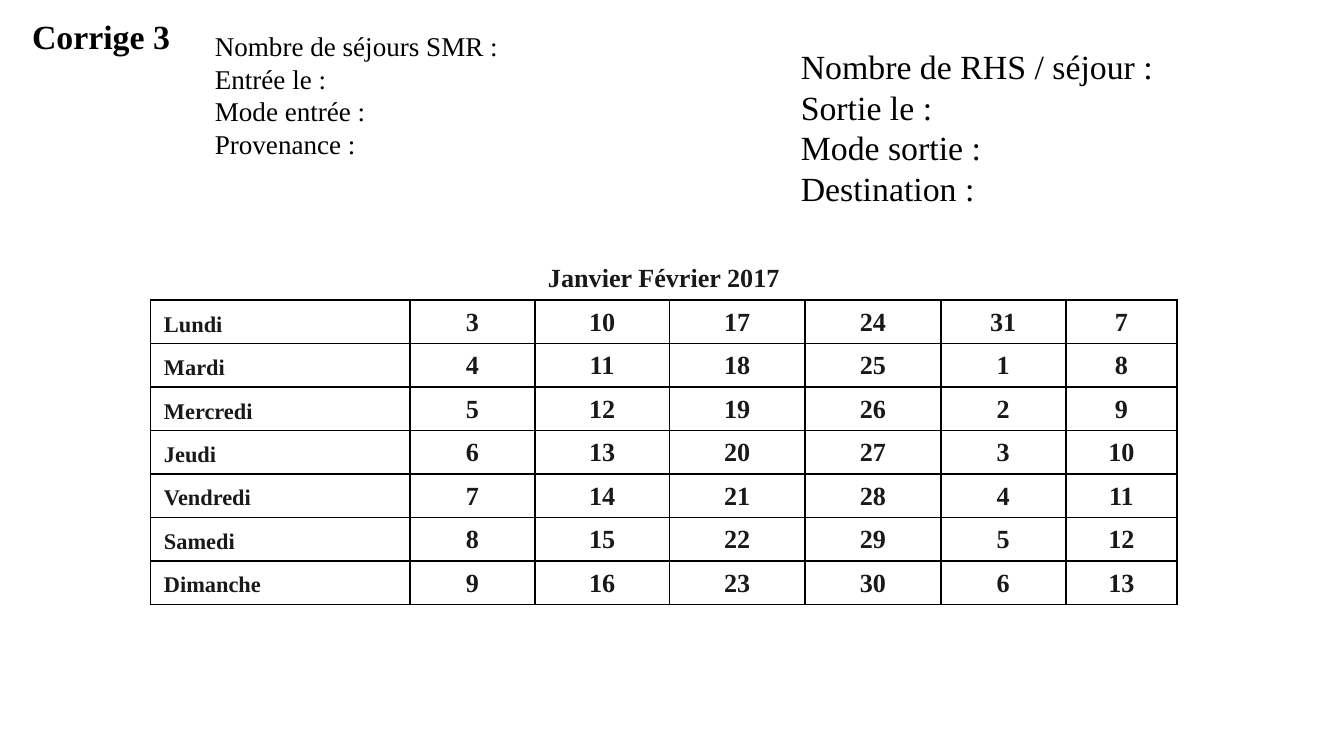
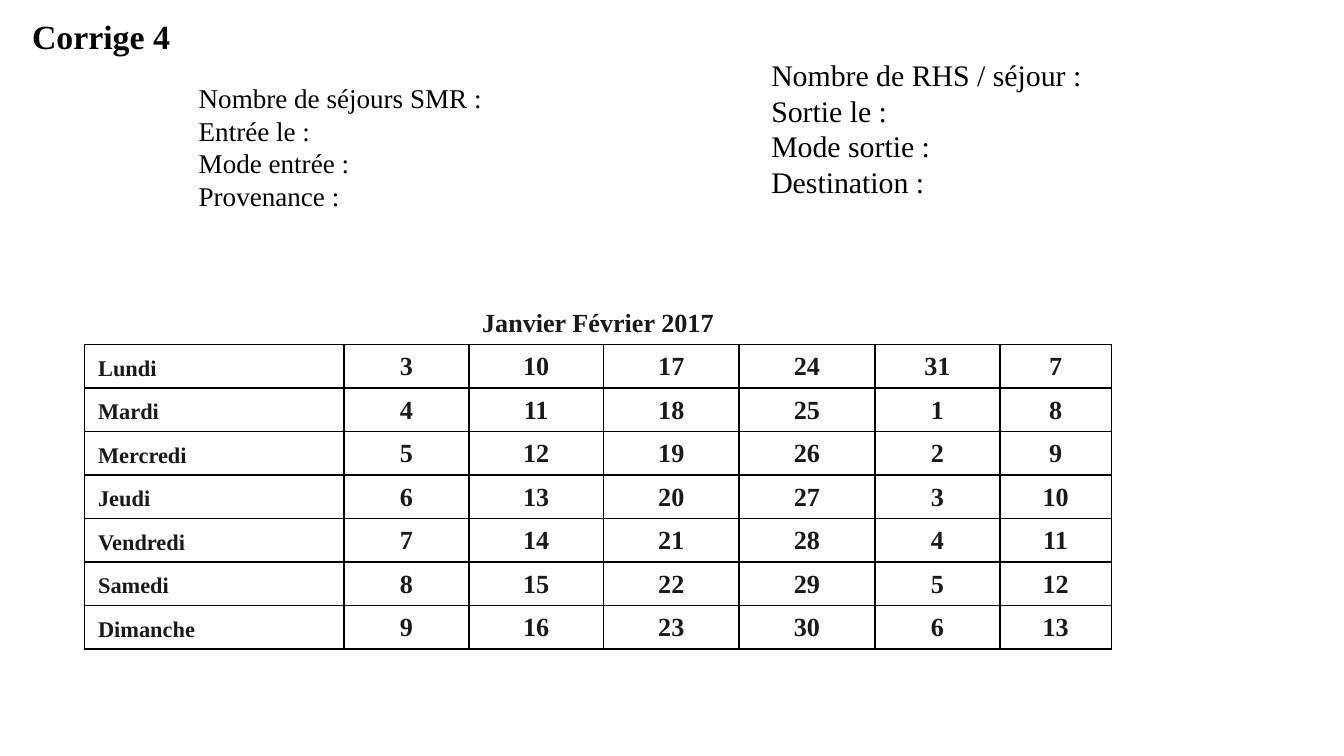
from lxml.etree import SubElement
from pptx import Presentation
from pptx.dml.color import RGBColor
from pptx.enum.text import MSO_ANCHOR, MSO_AUTO_SIZE, PP_ALIGN
from pptx.oxml.ns import qn
from pptx.util import Inches, Pt

FONT = "Times New Roman"
BLACK = RGBColor(0x00, 0x00, 0x00)
INK = RGBColor(0x19, 0x19, 0x19)

ENTRY_FIELDS = ["Nombre de séjours SMR\u00a0:", "Entrée le :", "Mode entrée :", "Provenance :"]
EXIT_FIELDS = ["Nombre de RHS / séjour\u00a0:", "Sortie le :", "Mode sortie :", "Destination :"]
WEEKDAYS = ["Lundi", "Mardi", "Mercredi", "Jeudi", "Vendredi", "Samedi", "Dimanche"]
CALENDAR_TITLE = "Janvier Février 2017"
COLUMN_WIDTHS = [1.93, 0.93, 1, 1.01, 1.01, 0.93, 0.83]
CALENDAR_HEIGHT = 2.59
FIRST_DAY = 3
DAYS_IN_JANUARY = 31
HANGING_INDENT = Inches(0.38)
SIDES = ("L", "R", "T", "B")


def add_span(para, text, size, color, bold=False):
    span = para.add_run()
    span.text = text
    span.font.name = FONT
    span.font.size = Pt(size)
    span.font.bold = bold
    span.font.color.rgb = color


def add_text(page, lines, left, top, width, height, size, bold=False):
    box = page.shapes.add_textbox(Inches(left), Inches(top), Inches(width), Inches(height))
    frame = box.text_frame
    frame.word_wrap = False
    frame.auto_size = MSO_AUTO_SIZE.SHAPE_TO_FIT_TEXT
    for index, line in enumerate(lines):
        para = frame.add_paragraph() if index else frame.paragraphs[0]
        add_span(para, line, size, BLACK, bold)


def set_borders(cell, visible_sides):
    properties = cell._tc.get_or_add_tcPr()
    for side in SIDES:
        line = SubElement(properties, qn(f"a:ln{side}"), w=str(Pt(1)))
        if side in visible_sides:
            fill = SubElement(line, qn("a:solidFill"))
            SubElement(fill, qn("a:srgbClr"), val=str(BLACK))
        else:
            SubElement(line, qn("a:noFill"))


def fill_cell(cell, text, size, align, visible_sides=SIDES):
    set_borders(cell, visible_sides)
    cell.fill.background()
    cell.vertical_anchor = MSO_ANCHOR.BOTTOM
    cell.margin_top = Inches(0.04)
    cell.margin_bottom = Inches(0.05)
    para = cell.text_frame.paragraphs[0]
    para.alignment = align
    properties = para._p.get_or_add_pPr()
    properties.set("marL", str(HANGING_INDENT))
    properties.set("indent", str(-HANGING_INDENT))
    if text:
        add_span(para, text, size, INK, True)


def day_number(row, week):
    return (FIRST_DAY - 1 + row + 7 * week) % DAYS_IN_JANUARY + 1


def add_calendar(page, left, top):
    row_count = len(WEEKDAYS) + 1
    column_count = len(COLUMN_WIDTHS)
    frame = page.shapes.add_table(row_count, column_count, Inches(left), Inches(top),
                                  Inches(sum(COLUMN_WIDTHS)), Inches(CALENDAR_HEIGHT))
    table = frame.table
    table.first_row = False
    table.horz_banding = False
    for column, width in zip(table.columns, COLUMN_WIDTHS):
        column.width = Inches(width)

    for index in range(column_count):
        title = "" if index else CALENDAR_TITLE
        fill_cell(table.cell(0, index), title, 14, PP_ALIGN.CENTER, ("B",))
    table.cell(0, 0).merge(table.cell(0, column_count - 1))

    for row, weekday in enumerate(WEEKDAYS):
        fill_cell(table.cell(row + 1, 0), weekday, 12, PP_ALIGN.LEFT)
        for week in range(column_count - 1):
            day = str(day_number(row, week))
            fill_cell(table.cell(row + 1, week + 1), day, 14, PP_ALIGN.CENTER)


def add_exercise(deck, number, entry_at, exit_box, exit_size, calendar_at):
    page = deck.slides.add_slide(deck.slide_layouts[6])
    add_text(page, [f"Corrige {number}"], 0.14, 0.07, 1.24, 0.41, 18.1, True)
    add_calendar(page, *calendar_at)
    add_text(page, ENTRY_FIELDS, *entry_at, 2.38, 1.08, 14.5)
    add_text(page, EXIT_FIELDS, *exit_box, exit_size)


def main():
    deck = Presentation()
    deck.slide_width = Inches(10)
    deck.slide_height = deck.slide_width * 9 // 16
    add_exercise(deck, 3, (1.5, 0.17), (5.86, 0.29, 2.98, 1.32), 18.1, (1.12, 1.91))
    add_exercise(deck, 4, (1.38, 0.56), (5.64, 0.37, 2.65, 1.18), 16, (0.63, 2.24))
    deck.save("out.pptx")


if __name__ == "__main__":
    main()
